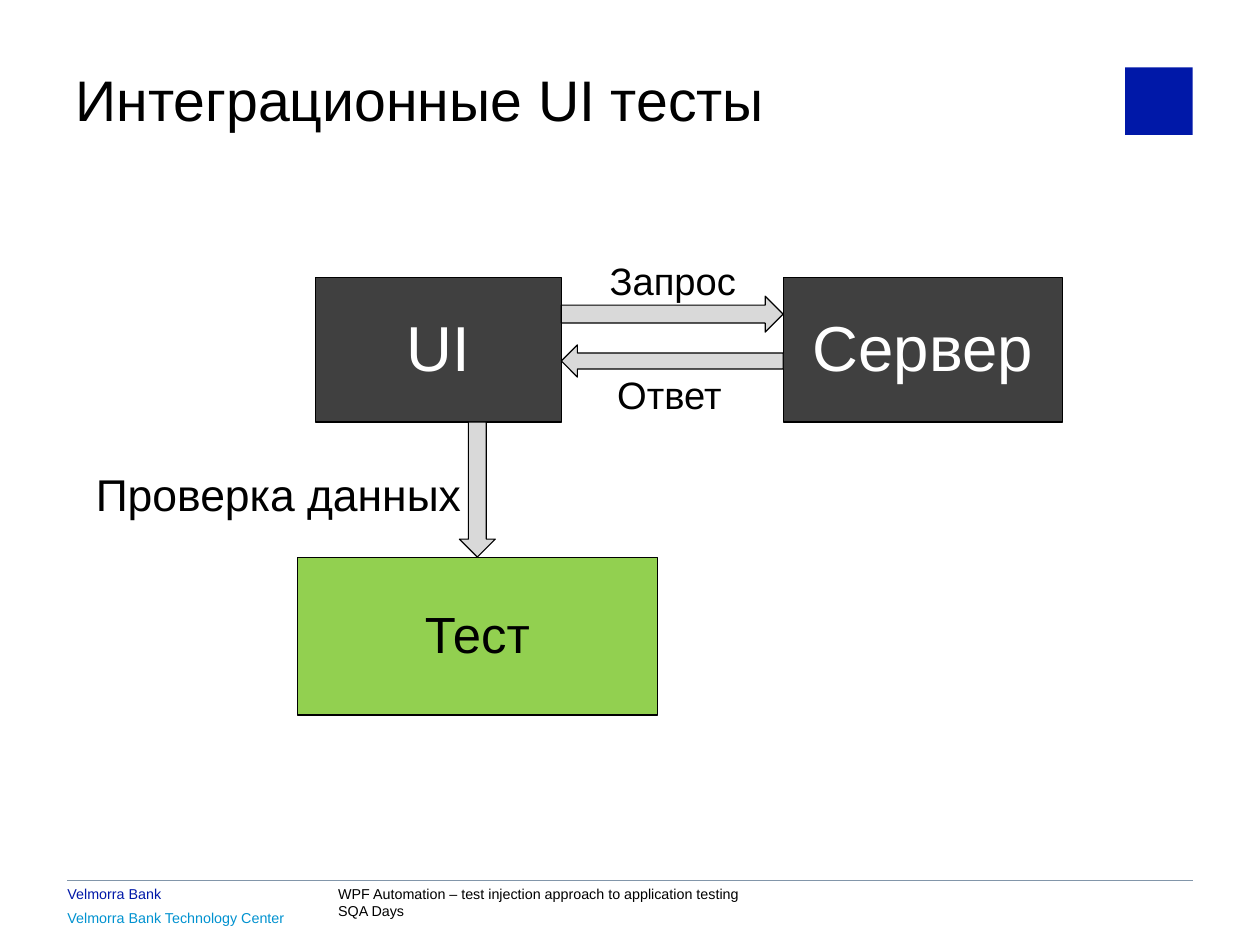
"""Build the slide on integration UI tests."""
from dataclasses import dataclass

from lxml import etree
from pptx import Presentation
from pptx import util as u
from pptx.dml import color
from pptx.enum import shapes, text
from pptx.oxml import ns

COLORS = {"ink": "000000", "paper": "FFFFFF", "node": "404040", "test": "92D050",
          "arrow": "D9D9D9", "rule": "8296AA", "brand": "0018A8", "unit": "0092D0"}
FONT = "Arial"
SPACING = 0.93
TOP, MIDDLE, BOTTOM = (text.MSO_ANCHOR.TOP, text.MSO_ANCHOR.MIDDLE,
                       text.MSO_ANCHOR.BOTTOM)
PRESETS = shapes.MSO_SHAPE


@dataclass(frozen=True)
class Area:
    left: float
    top: float
    width: float
    height: float

    @property
    def right(self) -> float:
        return self.left + self.width

    @property
    def bottom(self) -> float:
        return self.top + self.height

    def lengths(self) -> list[u.Length]:
        return [u.Pt(value) for value in (self.left, self.top, self.width, self.height)]


@dataclass(frozen=True)
class Label:
    words: str
    area: Area
    size: float
    ink: str = "ink"
    insets: tuple[float, float, float, float] = (7.2, 3.6, 7.2, 3.6)
    anchor: text.MSO_ANCHOR = TOP
    spacing: float = SPACING


@dataclass(frozen=True)
class Block:
    preset: shapes.MSO_SHAPE
    area: Area
    fill: str
    outlined: bool = True
    words: str = ""
    size: float = 0
    ink: str = "ink"


def rgb(name: str) -> color.RGBColor:
    return color.RGBColor.from_string(COLORS[name])


def apply(target, values: dict) -> None:
    for attribute, value in values.items():
        setattr(target, attribute, value)


def write(frame, label: Label, align: text.PP_ALIGN) -> None:
    left, top, right, bottom = (u.Pt(inset) for inset in label.insets)
    apply(frame, {"text": label.words, "word_wrap": True,
                  "vertical_anchor": label.anchor, "margin_left": left,
                  "margin_top": top, "margin_right": right, "margin_bottom": bottom})
    for paragraph in frame.paragraphs:
        apply(paragraph, {"alignment": align, "line_spacing": label.spacing})
        for run in paragraph.runs:
            apply(run.font, {"name": FONT, "size": u.Pt(label.size)})
            run.font.color.rgb = rgb(label.ink)


def draw_label(slide, label: Label) -> None:
    box = slide.shapes.add_textbox(*label.area.lengths())
    write(box.text_frame, label, text.PP_ALIGN.LEFT)


def draw_block(slide, block: Block) -> None:
    shape = slide.shapes.add_shape(block.preset, *block.area.lengths())
    shape.shadow.inherit = False
    shape.fill.solid()
    shape.fill.fore_color.rgb = rgb(block.fill)
    if block.outlined:
        shape.line.color.rgb = rgb("ink")
        shape.line.width = u.Pt(0.75)
    else:
        shape.line.fill.background()
    if block.words:
        label = Label(block.words, block.area, block.size, block.ink, anchor=MIDDLE)
        write(shape.text_frame, label, text.PP_ALIGN.CENTER)


def draw_rule(slide, left: float, right: float, top: float) -> None:
    rule = slide.shapes.add_connector(shapes.MSO_CONNECTOR.STRAIGHT, u.Pt(left),
                                      u.Pt(top), u.Pt(right), u.Pt(top))
    rule.line.color.rgb = rgb("rule")
    rule.line.width = u.Pt(0.5)
    etree.SubElement(rule._element.spPr, ns.qn("a:effectLst"))


MARGIN, RIGHT_EDGE, FOOTER_TOP = 42.5, 751, 554.4
BADGE_SIDE = 42.5
UI = Area(198.5, 175, 155, 90.7)
SERVER = Area(493.2, UI.top, 175.7, UI.height)
TEST = Area(187.2, 350.8, 226.8, 99.5)
GAP = SERVER.left - UI.right
CHECK_WIDTH = 22.6

BLOCKS = [
    Block(PRESETS.RECTANGLE, Area(RIGHT_EDGE - BADGE_SIDE, 42.5, BADGE_SIDE, BADGE_SIDE),
          "brand", outlined=False),
    Block(PRESETS.RECTANGLE, UI, "node", words="UI", size=40, ink="paper"),
    Block(PRESETS.RECTANGLE, SERVER, "node", words="Сервер", size=40, ink="paper"),
    Block(PRESETS.RIGHT_ARROW, Area(UI.right, 186.5, GAP, 22.6), "arrow"),
    Block(PRESETS.LEFT_ARROW, Area(UI.right, 217.2, GAP, 20.2), "arrow"),
    Block(PRESETS.RECTANGLE, TEST, "test", words="Тест", size=32),
    Block(PRESETS.DOWN_ARROW,
          Area(TEST.left + (TEST.width - CHECK_WIDTH) / 2, UI.bottom, CHECK_WIDTH,
               TEST.top - UI.bottom), "arrow"),
]

LABELS = [
    Label("Интеграционные UI тесты", Area(40.5, 41, 456, 47.5), 36),
    Label("Запрос", Area(376.8, 161.3, 97, 34.5), 24),
    Label("Ответ", Area(381.6, 232.6, 83, 34.5), 24),
    Label("Проверка данных", Area(53.3, 293.8, 249, 39), 28),
    Label("Velmorra Bank", Area(0, FOOTER_TOP, 104, 13.7), 9, "brand",
          (MARGIN, 2.9, 0, 0), spacing=1),
    Label("Velmorra Bank Technology Center", Area(0, 568, 190, 29.5), 9, "unit",
          (MARGIN, 0, 0, 18), BOTTOM, 1),
    Label("WPF Automation – test injection approach to application testing\vSQA Days",
          Area(213, FOOTER_TOP, 260, 42.5), 9, insets=(0, 2.9, 0, 18), spacing=1),
]


def main() -> None:
    deck = Presentation()
    apply(deck, {"slide_width": u.Pt(793.44), "slide_height": u.Pt(596.88)})
    slide = deck.slides.add_slide(deck.slide_layouts[6])
    draw_rule(slide, MARGIN, RIGHT_EDGE, FOOTER_TOP)
    for block in BLOCKS:
        draw_block(slide, block)
    for label in LABELS:
        draw_label(slide, label)
    deck.save("out.pptx")


if __name__ == "__main__":
    main()
